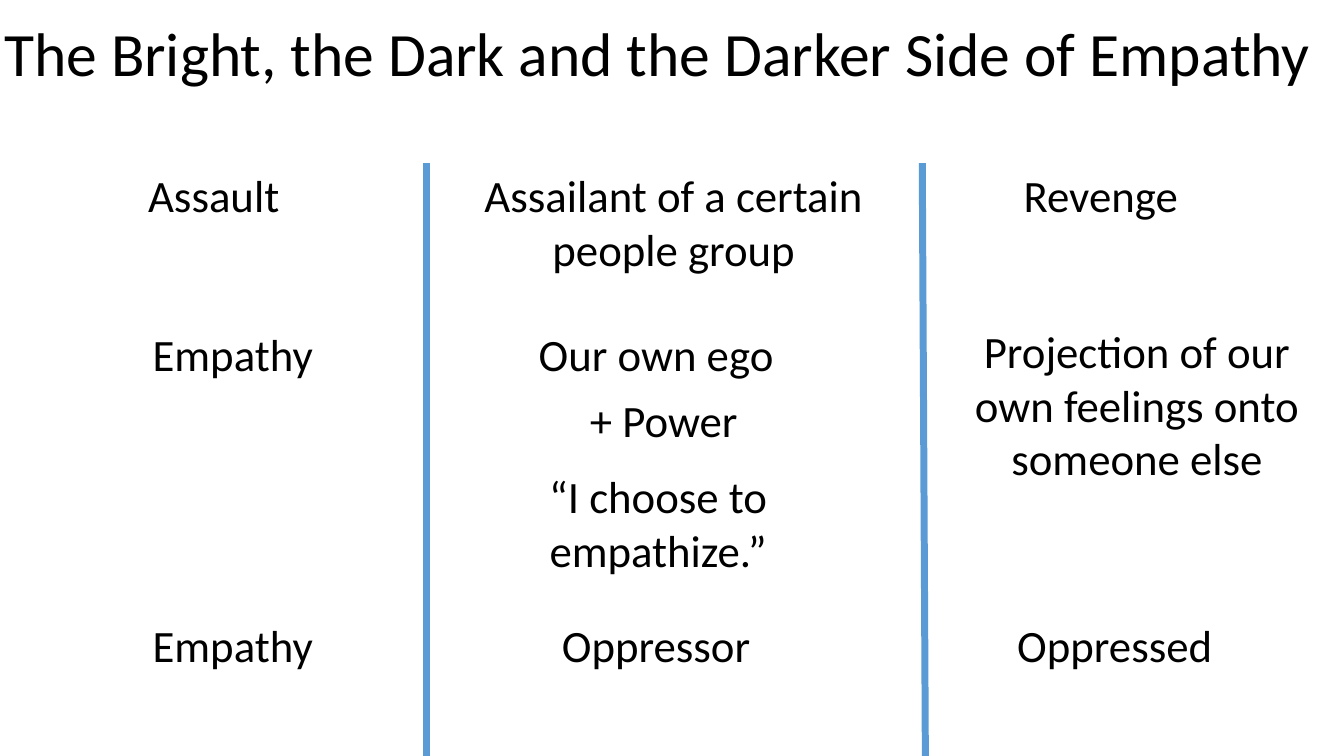
"""Build the slide on the bright, dark and darker sides of empathy."""
from pptx import Presentation
from pptx.dml.color import RGBColor
from pptx.enum import shapes, text
from pptx.oxml.ns import qn
from pptx.util import Pt
from lxml import etree

THEME = {
    "font": "Calibri",
    "ink": RGBColor.from_string("000000"),
    "divider": RGBColor.from_string("5B9BD5"),
    "title_size": 44,
    "body_size": 32,
    "divider_width": 5,
}
SLIDE_WIDTH, SLIDE_HEIGHT = 960, 540
COLUMN_WIDTH = 250.6
ONE_LINE, TWO_LINES = 46.1, 85
TOP_ROW, MIDDLE_ROW, BOTTOM_ROW = 116.6, 229.7, 437.8

TITLE = ("The Bright, the Dark and the Darker Side of Empathy", -13.7, 7.2, 967.7, 60.5)
STATEMENTS = [
    ("Assault", 27.4, TOP_ROW, COLUMN_WIDTH, ONE_LINE),
    ("Assailant of a certain people group", 313.2, TOP_ROW, 336.2, TWO_LINES),
    ("Revenge", 661, TOP_ROW, COLUMN_WIDTH, ONE_LINE),
    ("Empathy", 41, MIDDLE_ROW, COLUMN_WIDTH, ONE_LINE),
    ("Our own ego", 343.4, MIDDLE_ROW, COLUMN_WIDTH, ONE_LINE),
    ("+ Power", 398.9, 277.2, 150.5, 67.7),
    ("“I choose to empathize.”", 344.9, 331.2, COLUMN_WIDTH, TWO_LINES),
    ("Projection of our own feelings onto someone else", 686.9, 227.5, COLUMN_WIDTH, 162.7),
    ("Empathy", 41, BOTTOM_ROW, COLUMN_WIDTH, ONE_LINE),
    ("Oppressor", 343.4, BOTTOM_ROW, COLUMN_WIDTH, ONE_LINE),
    ("Oppressed", 671, BOTTOM_ROW, COLUMN_WIDTH, ONE_LINE),
]
DIVIDERS = [(304.6, 304.6), (658.8, 661)]


def add_divider(slide, top_x, bottom_x):
    divider = slide.shapes.add_connector(
        shapes.MSO_CONNECTOR.STRAIGHT,
        Pt(top_x), Pt(TOP_ROW), Pt(bottom_x), Pt(SLIDE_HEIGHT))
    divider.line.color.rgb = THEME["divider"]
    divider.line.width = Pt(THEME["divider_width"])
    etree.SubElement(divider._element.spPr, qn("a:effectLst"))


def add_statement(slide, wording, left, top, width, height, size):
    frame = slide.shapes.add_textbox(Pt(left), Pt(top), Pt(width), Pt(height)).text_frame
    frame.word_wrap = True
    frame.auto_size = text.MSO_AUTO_SIZE.SHAPE_TO_FIT_TEXT
    paragraph = frame.paragraphs[0]
    paragraph.text = wording
    paragraph.alignment = text.PP_ALIGN.CENTER
    paragraph.font.name = THEME["font"]
    paragraph.font.size = Pt(size)
    paragraph.font.color.rgb = THEME["ink"]


def main():
    deck = Presentation()
    deck.slide_width, deck.slide_height = Pt(SLIDE_WIDTH), Pt(SLIDE_HEIGHT)
    slide = deck.slides.add_slide(deck.slide_layouts[6])
    for divider_ends in DIVIDERS:
        add_divider(slide, *divider_ends)
    add_statement(slide, *TITLE, THEME["title_size"])
    for statement in STATEMENTS:
        add_statement(slide, *statement, THEME["body_size"])
    deck.save("out.pptx")


if __name__ == "__main__":
    main()
